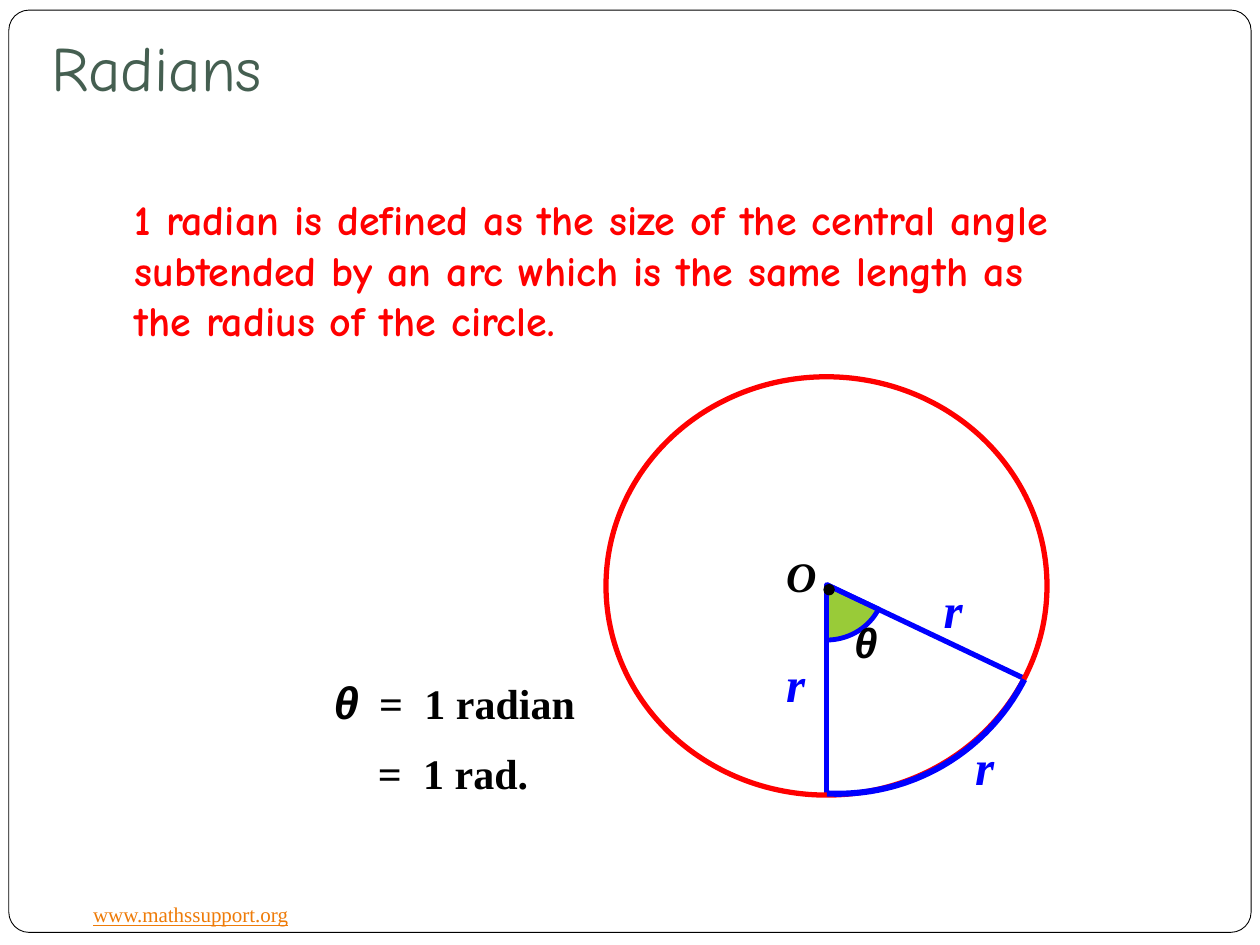
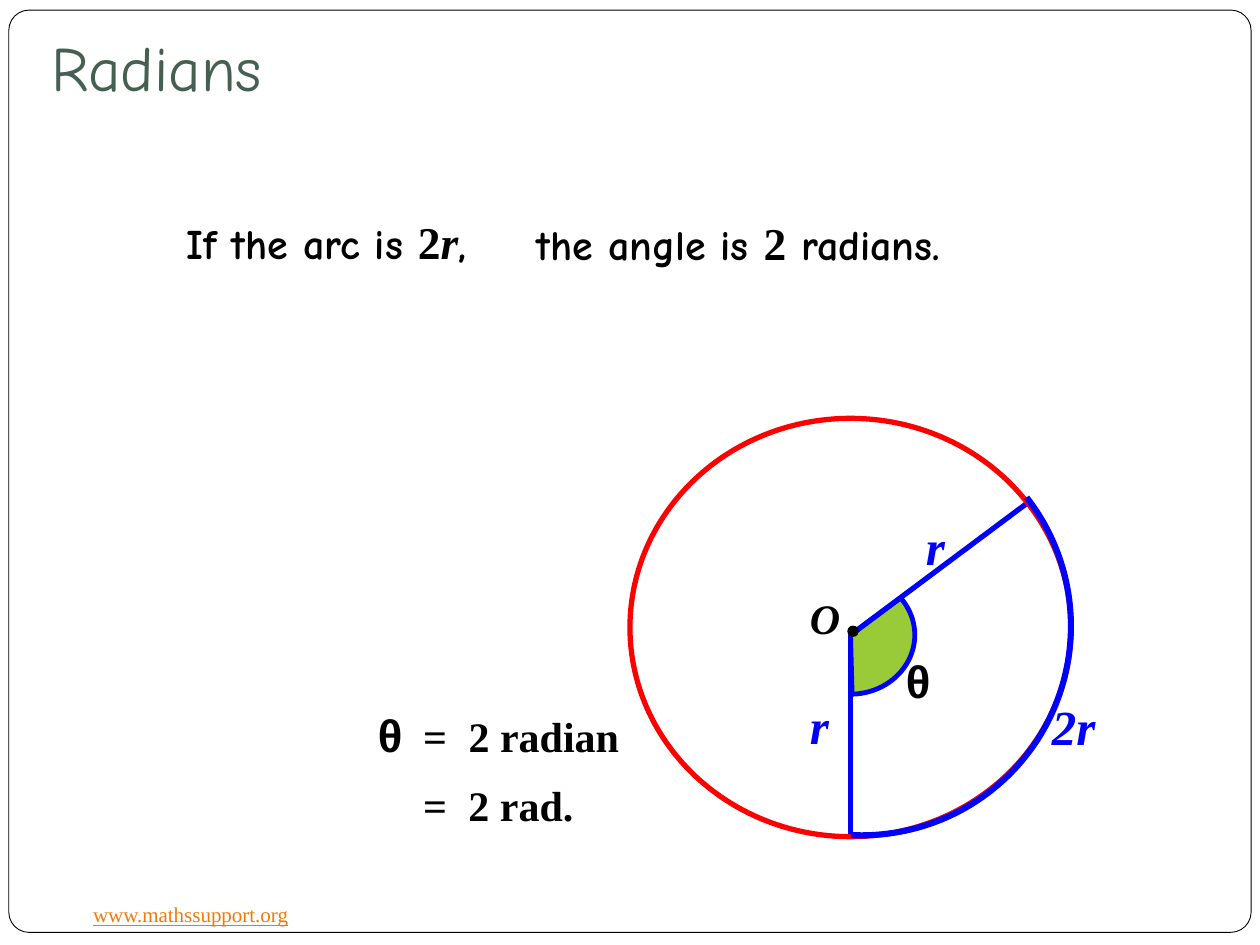
from math import cos, radians, sin

from lxml import etree
from pptx import Presentation
from pptx.dml.color import RGBColor
from pptx.enum.shapes import MSO_CONNECTOR, MSO_SHAPE
from pptx.enum.text import MSO_ANCHOR, MSO_AUTO_SIZE, PP_ALIGN
from pptx.oxml.ns import qn
from pptx.util import Pt

PX = 9144
STRAIGHT = MSO_CONNECTOR.STRAIGHT
OVAL, PIE, ROUNDED = MSO_SHAPE.OVAL, MSO_SHAPE.PIE, MSO_SHAPE.ROUNDED_RECTANGLE
LEFT, BOTTOM = PP_ALIGN.LEFT, MSO_ANCHOR.BOTTOM
NO_FIT, GROW = MSO_AUTO_SIZE.NONE, MSO_AUTO_SIZE.SHAPE_TO_FIT_TEXT
TAB_STEP = 36
ADJUSTMENT_PER_DEGREE = 0.6

COLORS = {
    "title": "455F51",
    "link": "EE7B08",
    "red": "FF0000",
    "blue": "0000FF",
    "green": "99CB38",
    "black": "000000",
    "white": "FFFFFF",
}
COMIC, TIMES, ARIAL = "Comic Neue", "Times New Roman", "Arial"
STYLES = {
    "title": (COMIC, 36, "title", False, False),
    "link": (TIMES, 12, "link", False, False),
    "definition": (COMIC, 24, "red", True, False),
    "sentence": (COMIC, 24, "black", True, False),
    "number": (TIMES, 26, "black", True, False),
    "variable": (TIMES, 26, "black", True, True),
    "result": (TIMES, 24, "black", True, False),
    "centre": (TIMES, 24, "black", True, True),
    "length": (TIMES, 28, "blue", True, True),
    "theta": (ARIAL, 26, "black", True, False),
    "theta italic": (ARIAL, 26, "black", True, True),
    "theta small": (ARIAL, 24, "black", True, True),
}

SLIDES = [
    {
        "circle": (481, 299),
        "vertex": (656, 464),
        "arm_end": (814, 539),
        "sector": (92, 88, 25.26, 90.12),
        "arcs": [(27, 93)],
        "texts": [
            (97, 149, 767, 131, [(
                "1 radian is defined as the size of the central angle subtended "
                "by an arc which is the same length as the radius of the circle.",
                "definition")]),
            (764, 580, 50, 57, [("r", "length")]),
            (739, 455, 50, 57, [("r", "length")]),
            (668, 484, 42, 50, [("θ", "theta small")]),
            (255, 530, 242, 53, [("θ", "theta italic"), ("\t=\t1 radian", "result")]),
            (290, 588, 242, 50, [("=\t1 rad.", "result")]),
        ],
    },
    {
        "circle": (500, 332),
        "vertex": (675, 504),
        "arm_end": (817, 398),
        "sector": (102, 94, 323.41, 88.48),
        "arcs": [(27, 93), (-38, 27)],
        "texts": [
            (825, 548, 67, 57, [("2r", "length")]),
            (725, 405, 50, 57, [("r", "length")]),
            (709, 513, 58, 53, [("θ", "theta")]),
            (290, 556, 242, 53, [("θ", "theta"), ("\t=\t2 radian", "result")]),
            (326, 614, 242, 50, [("=\t2 rad.", "result")]),
            (138, 165, 312, 53, [("If the arc is ", "sentence"), ("2", "number"),
                                 ("r", "variable"), (",", "sentence")]),
            (416, 166, 401, 53, [("the angle is ", "sentence"), ("2", "number"),
                                 (" radians.", "sentence")]),
        ],
    },
]


def set_font(font, style):
    font.name, size, color, font.bold, font.italic = STYLES[style]
    font.size = Pt(size)
    font.color.rgb = RGBColor.from_string(COLORS[color])


def paint(shape, fill, line, width):
    shape.shadow.inherit = False
    if fill:
        shape.fill.solid()
        shape.fill.fore_color.rgb = RGBColor.from_string(COLORS[fill])
    else:
        shape.fill.background()
    shape.line.color.rgb = RGBColor.from_string(COLORS[line])
    shape.line.width = Pt(width)


deck = Presentation()
deck.slide_width, deck.slide_height = 1000 * PX, 750 * PX
layout = deck.slide_layouts[5]
pages = [deck.slides.add_slide(layout) for _ in SLIDES]

frame = pages[0].shapes.add_shape(ROUNDED, 7 * PX, 8 * PX, 986 * PX, 732 * PX)
frame.adjustments[0] = 0.022
paint(frame, "white", "black", 0.5)
footer = pages[0].shapes.add_textbox(64 * PX, 711 * PX, 177 * PX, 30 * PX)
footer.text_frame.word_wrap = False
footer.text_frame.auto_size = GROW
para = footer.text_frame.paragraphs[0]
para.text = "www.mathssupport.org"
set_font(para.font, "link")
para.font.underline = True
for position, shape in enumerate((frame, footer), start=2):
    deck.slide_master.shapes.element.insert(position, shape.element)

for page, content in zip(pages, SLIDES):
    title = page.shapes.title
    title.left, title.top, title.width, title.height = 31 * PX, 30 * PX, 850 * PX, 63 * PX
    title.text_frame.text = "Radians"
    title.text_frame.auto_size = NO_FIT
    title.text_frame.vertical_anchor = BOTTOM
    title.text_frame.margin_bottom = 10 * PX
    para = title.text_frame.paragraphs[0]
    para.alignment = LEFT
    set_font(para.font, "title")

    circle_left, circle_top = content["circle"]
    vertex_x, vertex_y = content["vertex"]

    width, height, start, end = content["sector"]
    sector = page.shapes.add_shape(
        PIE, (vertex_x - width // 2) * PX, (vertex_y - height // 2) * PX,
        width * PX, height * PX)
    sector.adjustments[0] = start * ADJUSTMENT_PER_DEGREE
    sector.adjustments[1] = end * ADJUSTMENT_PER_DEGREE
    paint(sector, "green", "blue", 2.75)

    for end_x, end_y in ((vertex_x, circle_top + 331), content["arm_end"]):
        radius_line = page.shapes.add_connector(
            STRAIGHT, end_x * PX, end_y * PX, vertex_x * PX, vertex_y * PX)
        radius_line.line.color.rgb = RGBColor.from_string(COLORS["blue"])
        radius_line.line.width = Pt(3)
        etree.SubElement(radius_line.element.spPr, qn("a:effectLst"))

    circle = page.shapes.add_shape(
        OVAL, circle_left * PX, circle_top * PX, 350 * PX, 332 * PX)
    paint(circle, None, "red", 3)
    dot = page.shapes.add_shape(
        OVAL, (circle_left + 173) * PX, (circle_top + 165) * PX, 8 * PX, 8 * PX)
    paint(dot, "black", "black", 0.75)

    for start, end in content["arcs"]:
        points = [
            ((circle_left + 184 + 166 * cos(radians(angle))) * PX,
             (circle_top + 165 + 166 * sin(radians(angle))) * PX)
            for angle in range(start, end + 1)
        ]
        builder = page.shapes.build_freeform(*points[0])
        builder.add_line_segments(points[1:], close=False)
        paint(builder.convert_to_shape(), None, "blue", 3.5)

    circle_labels = [
        (circle_left + 133, circle_top + 133, 58, 50, [("O", "centre")]),
        (circle_left + 133, circle_top + 215, 50, 57, [("r", "length")]),
    ]
    for left, top, width, height, spans in circle_labels + content["texts"]:
        box = page.shapes.add_textbox(left * PX, top * PX, width * PX, height * PX)
        box.text_frame.word_wrap = True
        box.text_frame.auto_size = GROW
        para = box.text_frame.paragraphs[0]
        tab_count = sum(text.count("\t") for text, style in spans)
        if tab_count:
            tabs = etree.SubElement(para._p.get_or_add_pPr(), qn("a:tabLst"))
            for number in range(1, tab_count + 1):
                etree.SubElement(tabs, qn("a:tab"), pos=str(number * TAB_STEP * PX), algn="l")
        main_style = spans[0][1]
        set_font(para.font, main_style)
        for text, style in spans:
            span = para.add_run()
            span.text = text
            if style != main_style:
                set_font(span.font, style)

deck.save("out.pptx")
